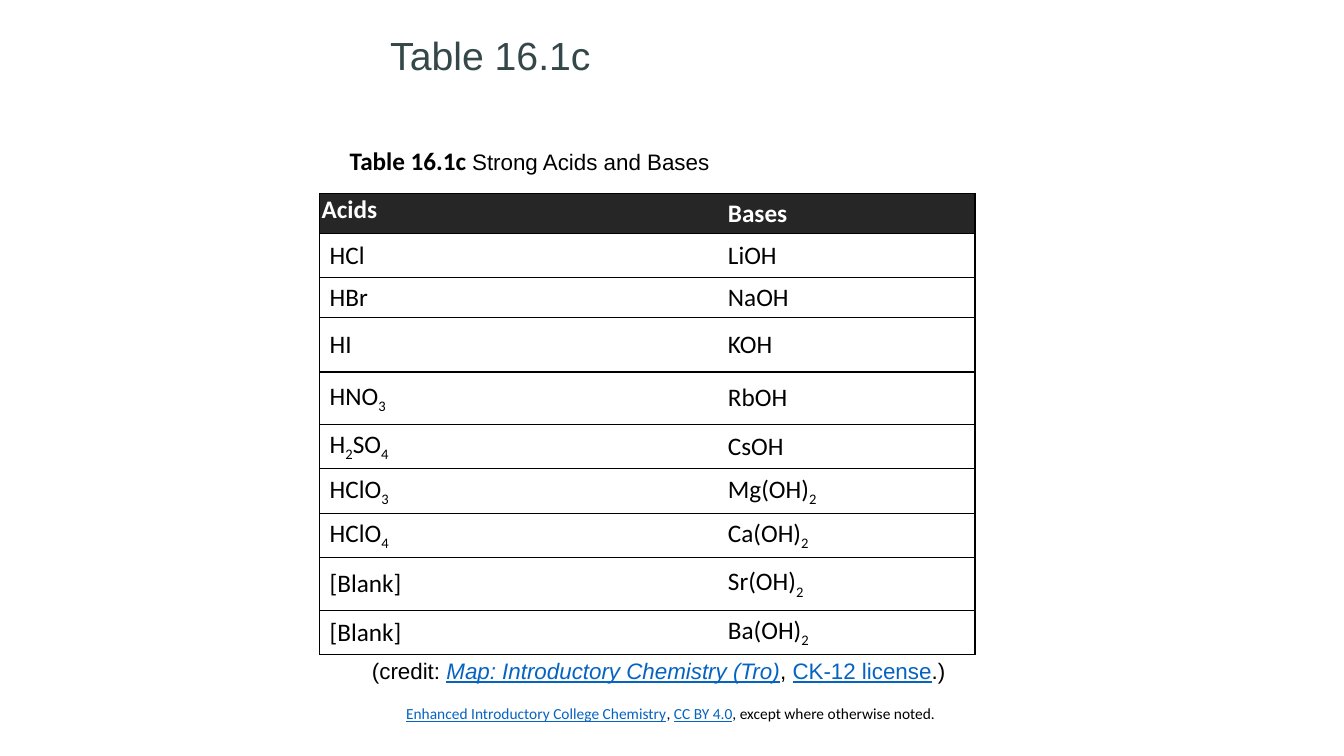
from itertools import groupby

from lxml.etree import SubElement
from pptx import Presentation
from pptx.dml.color import RGBColor
from pptx.enum.text import MSO_ANCHOR, MSO_AUTO_SIZE, PP_ALIGN
from pptx.oxml.ns import qn
from pptx.util import Inches, Pt

BLACK = RGBColor(0x00, 0x00, 0x00)
WHITE = RGBColor(0xFF, 0xFF, 0xFF)
HEADER_FILL = RGBColor(0x26, 0x26, 0x26)
TITLE_COLOR = RGBColor(0x35, 0x48, 0x49)
LINK_COLOR = RGBColor(0x05, 0x63, 0xC1)

LINK = {"color": LINK_COLOR, "underline": True}

HEADINGS = ("Acids", "Bases")
ACIDS = ("HCl", "HBr", "HI", "HNO3", "H2SO4", "HClO3", "HClO4", "[Blank]", "[Blank]")
BASES = ("LiOH", "NaOH", "KOH", "RbOH", "CsOH", "Mg(OH)2", "Ca(OH)2", "Sr(OH)2", "Ba(OH)2")
COLUMN_WIDTHS = (3.95, 2.55)
ROW_HEIGHTS = (0.35, 0.43, 0.33, 0.54, 0.52, 0.36, 0.42, 0.39, 0.52, 0.41)


def add_text(paragraph, text, font="Calibri", size=18, color=BLACK, bold=False,
             italic=False, underline=False, subscript=False):
    run = paragraph.add_run()
    run.text = text
    run.font.name = font
    run.font.size = Pt(size)
    run.font.color.rgb = color
    run.font.bold = bold
    run.font.italic = italic
    run.font.underline = underline
    if subscript:
        run.font._element.set("baseline", "-25000")


def set_borders(cell, sides):
    """Draw a thin black line on the given sides and none on the others."""
    properties = cell._tc.get_or_add_tcPr()
    for position, side in enumerate("LRTB"):
        line = SubElement(properties, qn(f"a:ln{side}"), w=str(Pt(1)))
        if side in sides:
            fill = SubElement(line, qn("a:solidFill"))
            SubElement(fill, qn("a:srgbClr"), val=str(BLACK))
        else:
            SubElement(line, qn("a:noFill"))
        properties.insert(position, line)


class SlideBuilder:
    def __init__(self, presentation):
        self.slide = presentation.slides.add_slide(presentation.slide_layouts[5])

    def title(self, text, left, top, width, height):
        title = self.slide.shapes.title
        title.left, title.top = Inches(left), Inches(top)
        title.width, title.height = Inches(width), Inches(height)
        frame = title.text_frame
        frame.auto_size = MSO_AUTO_SIZE.NONE
        frame.vertical_anchor = MSO_ANCHOR.BOTTOM
        paragraph = frame.paragraphs[0]
        paragraph.alignment = PP_ALIGN.LEFT
        paragraph.line_spacing = 0.9
        add_text(paragraph, text, font="Arial", size=28, color=TITLE_COLOR)

    def text_line(self, parts, left, top, width, height, **style):
        box = self.slide.shapes.add_textbox(
            Inches(left), Inches(top), Inches(width), Inches(height))
        box.text_frame.word_wrap = True
        for text, changes in parts:
            add_text(box.text_frame.paragraphs[0], text, **{**style, **changes})

    def table(self, rows, left, top, height):
        table = self.slide.shapes.add_table(
            len(rows), len(COLUMN_WIDTHS), Inches(left), Inches(top),
            Inches(sum(COLUMN_WIDTHS)), Inches(height)).table
        table.first_row = table.horz_banding = False
        for column, width in zip(table.columns, COLUMN_WIDTHS):
            column.width = Inches(width)
        for row, row_height in zip(table.rows, ROW_HEIGHTS):
            row.height = Inches(row_height)
        for row_index, row in enumerate(rows):
            for column_index, formula in enumerate(row):
                self.cell(table.cell(row_index, column_index), formula,
                          header=row_index == 0,
                          sides="RTB" if column_index else "LTB")
        # The first heading sits close to its corner
        corner = table.cell(0, 0)
        corner.vertical_anchor = MSO_ANCHOR.TOP
        corner.margin_left = corner.margin_right = Inches(0.02)
        corner.margin_top = corner.margin_bottom = Inches(0.01)

    def cell(self, cell, formula, header, sides):
        cell.fill.solid()
        cell.fill.fore_color.rgb = HEADER_FILL if header else WHITE
        cell.vertical_anchor = MSO_ANCHOR.MIDDLE
        set_borders(cell, sides)
        paragraph = cell.text_frame.paragraphs[0]
        for is_digit, characters in groupby(formula, str.isdigit):
            add_text(paragraph, "".join(characters), bold=header,
                     color=WHITE if header else BLACK, subscript=is_digit)


def main():
    presentation = Presentation()
    presentation.slide_width = Inches(13.33)
    presentation.slide_height = Inches(7.5)
    builder = SlideBuilder(presentation)

    # Title and caption
    builder.title("Table 16.1c", 3.77, 0.13, 2.27, 0.7)
    builder.text_line([
        ("Table 16.1c ", {"font": "Calibri", "size": 18, "bold": True}),
        ("Strong Acids and Bases", {}),
    ], 3.37, 1.39, 8.11, 0.4, font="Arial", size=16)

    # Acids and bases
    builder.table([HEADINGS, *zip(ACIDS, BASES)], 3.17, 1.92, 4.43)

    # Credit and licence
    builder.text_line([
        ("(credit: ", {}),
        ("Map: Introductory Chemistry (Tro)", {**LINK, "italic": True}),
        (", ", {}),
        ("CK-12 license", LINK),
        (".)", {}),
    ], 3.59, 6.47, 6.15, 0.37, font="Arial", size=16)
    builder.text_line([
        ("Enhanced Introductory College Chemistry", LINK),
        (", ", {}),
        ("CC BY 4.0", LINK),
        (", except where otherwise noted.", {}),
    ], 3.93, 6.94, 7.07, 0.4, size=11)

    presentation.save("out.pptx")


if __name__ == "__main__":
    main()
